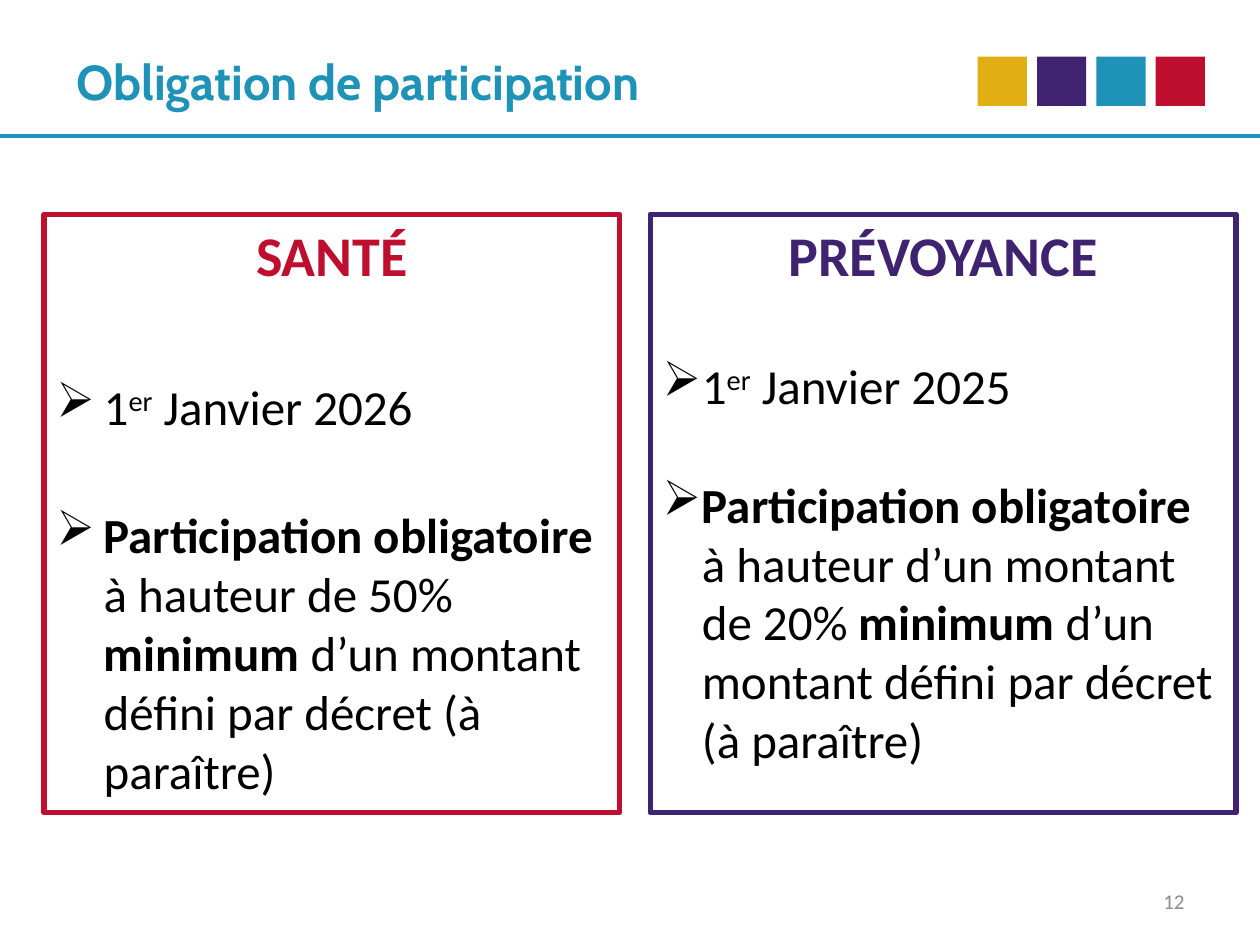
"""Build the slide on mandatory employer participation."""
import lxml.etree
import pptx
import pptx.dml.color
import pptx.enum.shapes
import pptx.enum.text
import pptx.oxml.ns
import pptx.util

Pt = pptx.util.Pt
ALIGN = pptx.enum.text.PP_ALIGN
ANCHOR = pptx.enum.text.MSO_ANCHOR
RECTANGLE = pptx.enum.shapes.MSO_SHAPE.RECTANGLE
qn = pptx.oxml.ns.qn
COLORS = {
    "gold": "E1AE13",
    "purple": "3F2270",
    "blue": "1F92B7",
    "red": "BE0F2E",
    "gray": "8C8C8C",
    "black": "000000",
}


def rgb(name):
    return pptx.dml.color.RGBColor.from_string(COLORS[name])


def add_run(paragraph, text, color, **formats):
    run = paragraph.add_run()
    run.text = text
    run.font.color.rgb = rgb(color)
    for name, value in ({"name": "Calibri", "bold": False} | formats).items():
        setattr(run.font, name, value)
    return run


presentation = pptx.Presentation()
presentation.slide_width, presentation.slide_height = Pt(720), Pt(540)
slide = presentation.slides.add_slide(presentation.slide_layouts[6])

rule = slide.shapes.add_connector(
    pptx.enum.shapes.MSO_CONNECTOR.STRAIGHT, Pt(0), Pt(77.8), Pt(720), Pt(77.8)
)
rule.line.color.rgb = rgb("blue")
rule.line.width = Pt(2.25)
lxml.etree.SubElement(rule._element.spPr, qn("a:effectLst"))

for index, color in enumerate(["gold", "purple", "blue", "red"]):
    square = slide.shapes.add_shape(
        RECTANGLE, Pt(558.7 + 33.9 * index), Pt(32.4), Pt(28.1), Pt(28.1)
    )
    square.shadow.inherit = False
    square.fill.solid()
    square.fill.fore_color.rgb = rgb(color)
    square.line.fill.background()

labels = [
    ("12", (516, 500.4, 168, 28.8), ALIGN.RIGHT, "gray", {"size": Pt(12)}),
    ("Obligation de participation", (36.7, 16.6, 648, 59.8), ALIGN.LEFT, "blue",
     {"size": Pt(28), "name": "Cabin", "bold": True}),
]
for text, bounds, alignment, color, formats in labels:
    text_box = slide.shapes.add_textbox(*map(Pt, bounds))
    text_box.text_frame.word_wrap = True
    text_box.text_frame.vertical_anchor = ANCHOR.MIDDLE
    paragraph = text_box.text_frame.paragraphs[0]
    paragraph.alignment = alignment
    add_run(paragraph, text, color, **formats)

panels = [
    {"heading": "SANTÉ", "color": "red", "left": 25.2, "width": 329, "indent": 27,
     "gaps": (51, 39.5), "year": "2026",
     "amounts": ("à hauteur de 50% ", " d’un montant défini par décret (à paraître)")},
    {"heading": "PRÉVOYANCE", "color": "purple", "left": 371.5, "width": 334.8, "indent": 22.5,
     "gaps": (39, 34), "year": "2025",
     "amounts": ("à hauteur d’un montant de 20% ", " d’un montant défini par décret (à paraître)")},
]
for panel in panels:
    box = slide.shapes.add_shape(
        RECTANGLE, Pt(panel["left"]), Pt(122.4), Pt(panel["width"]), Pt(342)
    )
    box.shadow.inherit = False
    box.fill.background()
    box.line.color.rgb = rgb(panel["color"])
    box.line.width = Pt(3)
    frame = box.text_frame
    frame.word_wrap = True
    frame.vertical_anchor = ANCHOR.TOP
    heading = frame.paragraphs[0]
    heading.alignment = ALIGN.CENTER
    add_run(heading, panel["heading"], panel["color"], size=Pt(32), bold=True)

    before, after = panel["amounts"]
    bullets = [
        [("1", False, 0), ("er", False, 30000), (f" Janvier {panel['year']}", False, 0)],
        [("Participation obligatoire ", True, 0), (before, False, 0),
         ("minimum", True, 0), (after, False, 0)],
    ]
    for gap, pieces in zip(panel["gaps"], bullets):
        paragraph = frame.add_paragraph()
        paragraph.alignment = ALIGN.LEFT
        paragraph.space_before = Pt(gap)
        properties = paragraph._p.get_or_add_pPr()
        properties.set("marL", str(Pt(panel["indent"])))
        properties.set("indent", str(-Pt(panel["indent"])))
        lxml.etree.SubElement(properties, qn("a:buChar"), char="➢")
        for text, bold, baseline in pieces:
            run = add_run(paragraph, text, "black", size=Pt(28), bold=bold)
            if baseline:
                run._r.get_or_add_rPr().set("baseline", str(baseline))

presentation.save("out.pptx")
